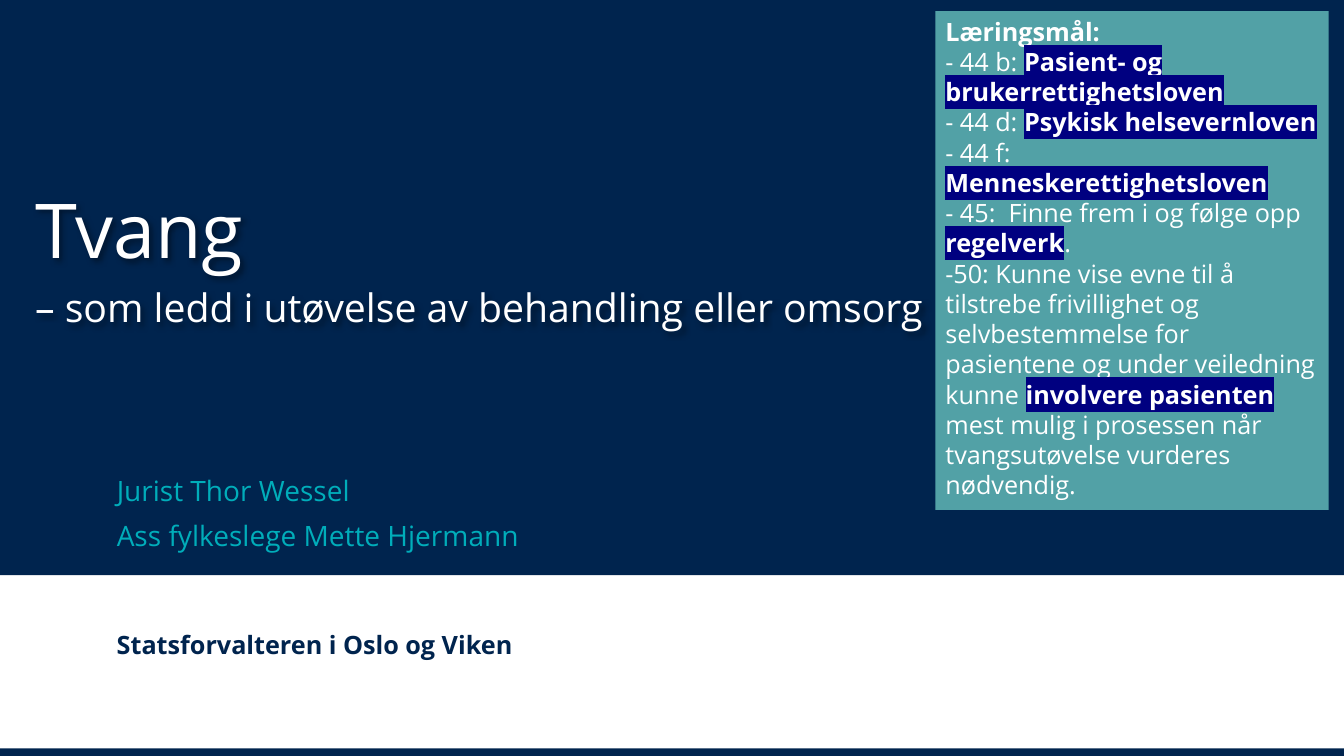
"""Build the opening slide of a talk on coercion in care."""
from lxml.etree import SubElement
from pptx import Presentation
from pptx.dml.color import RGBColor
from pptx.enum.shapes import MSO_SHAPE
from pptx.enum.text import MSO_ANCHOR, PP_ALIGN
from pptx.oxml import parse_xml
from pptx.oxml.ns import qn
from pptx.util import Pt

TITLE = [("Tvang", "title"), ("– som ledd i utøvelse av behandling eller omsorg", "sub")]
NAMES = ["Jurist Thor Wessel", "Ass fylkeslege Mette Hjermann"]
OFFICE = "Statsforvalteren i Oslo og Viken"
GOALS = [
    [("Læringsmål:", "strong")],
    [("- 44 b: ", "plain"), ("Pasient- og brukerrettighetsloven", "mark")],
    [("- 44 d: ", "plain"), ("Psykisk helsevernloven", "mark")],
    [("- 44 f: ", "plain"), ("Menneskerettighetsloven", "mark")],
    [("- 45:  Finne frem i og følge opp ", "plain"), ("regelverk", "mark"), (".", "plain")],
    [("-50: Kunne vise evne til å tilstrebe frivillighet og selvbestemmelse for "
      "pasientene og under veiledning kunne ", "plain"),
     ("involvere pasienten ", "mark"),
     ("mest mulig i prosessen når tvangsutøvelse vurderes nødvendig.", "plain")],
]

THEME = {
    "font": "Open Sans",
    "navy": "00244E", "teal": "52A1A6", "cyan": "00ADBA",
    "white": "FFFFFF", "mark": "000080",
    "styles": {
        "title": (54, "white", False),
        "sub": (28, "white", False),
        "name": (20, "cyan", False),
        "plain": (18, "white", False),
        "strong": (18, "white", True),
        "mark": (18, "white", True),
        "office": (18, "navy", True),
    },
}
WIDE, HIGH = 960, 540
AREAS = {
    "foot": (0, 534.6, WIDE, 5.4),
    "band": (0, 0, WIDE, 410.9),
    "title": (18, 118.1, 650.2, 121.7),
    "names": (76.3, 337.7, 404.6, 55.4),
    "goals": (668.2, 7.9, 280.8, 356.4),
    "office": (76.3, 445.7, 321.8, 28.8),
}
SHADE = (
    '<a:effectLst xmlns:a="http://schemas.openxmlformats.org/drawingml/2006/main">'
    '<a:outerShdw blurRad="50800" dist="38100" dir="2700000" algn="tl" rotWithShape="0">'
    '<a:srgbClr val="000000"><a:alpha val="40000"/></a:srgbClr>'
    '</a:outerShdw></a:effectLst>'
)


def tint(key):
    return RGBColor.from_string(THEME[key])


def add_rect(slide, area, fill):
    box = slide.shapes.add_shape(MSO_SHAPE.RECTANGLE, *map(Pt, AREAS[area]))
    box.shadow.inherit = False
    box.fill.solid()
    box.fill.fore_color.rgb = tint(fill)
    box.line.fill.background()
    return box


def add_text(slide, area):
    return slide.shapes.add_textbox(*map(Pt, AREAS[area]))


def style_run(run, style):
    size, color, bold = THEME["styles"][style]
    font = run.font
    font.name, font.size, font.bold = THEME["font"], Pt(size), bold
    font.color.rgb = tint(color)
    if style == "mark":
        props = run._r.get_or_add_rPr()
        mark = SubElement(props, qn("a:highlight"))
        SubElement(mark, qn("a:srgbClr")).set("val", THEME["mark"])
        props.find(qn("a:solidFill")).addnext(mark)


def write(box, lines, gap=0, lead=1.0, anchor=MSO_ANCHOR.TOP):
    frame = box.text_frame
    frame.word_wrap = True
    frame.vertical_anchor = anchor
    for i, line in enumerate(lines):
        para = frame.add_paragraph() if i else frame.paragraphs[0]
        para.alignment = PP_ALIGN.LEFT
        para.line_spacing = lead
        para.space_before = Pt(gap if i else 0)
        for text, style in line:
            run = para.add_run()
            run.text = text
            style_run(run, style)


def main():
    deck = Presentation()
    deck.slide_width, deck.slide_height = Pt(WIDE), Pt(HIGH)
    slide = deck.slides.add_slide(deck.slide_layouts[6])

    for area in ("foot", "band"):
        add_rect(slide, area, "navy")

    title = add_text(slide, "title")
    write(title, [[part] for part in TITLE], 10, 0.9, MSO_ANCHOR.BOTTOM)
    title._element.spPr.append(parse_xml(SHADE))

    names = add_text(slide, "names")
    write(names, [[(name, "name")] for name in NAMES], 10, 0.9)

    write(add_rect(slide, "goals", "teal"), GOALS)
    write(add_rect(slide, "office", "white"), [[(OFFICE, "office")]])
    deck.save("out.pptx")


if __name__ == "__main__":
    main()
